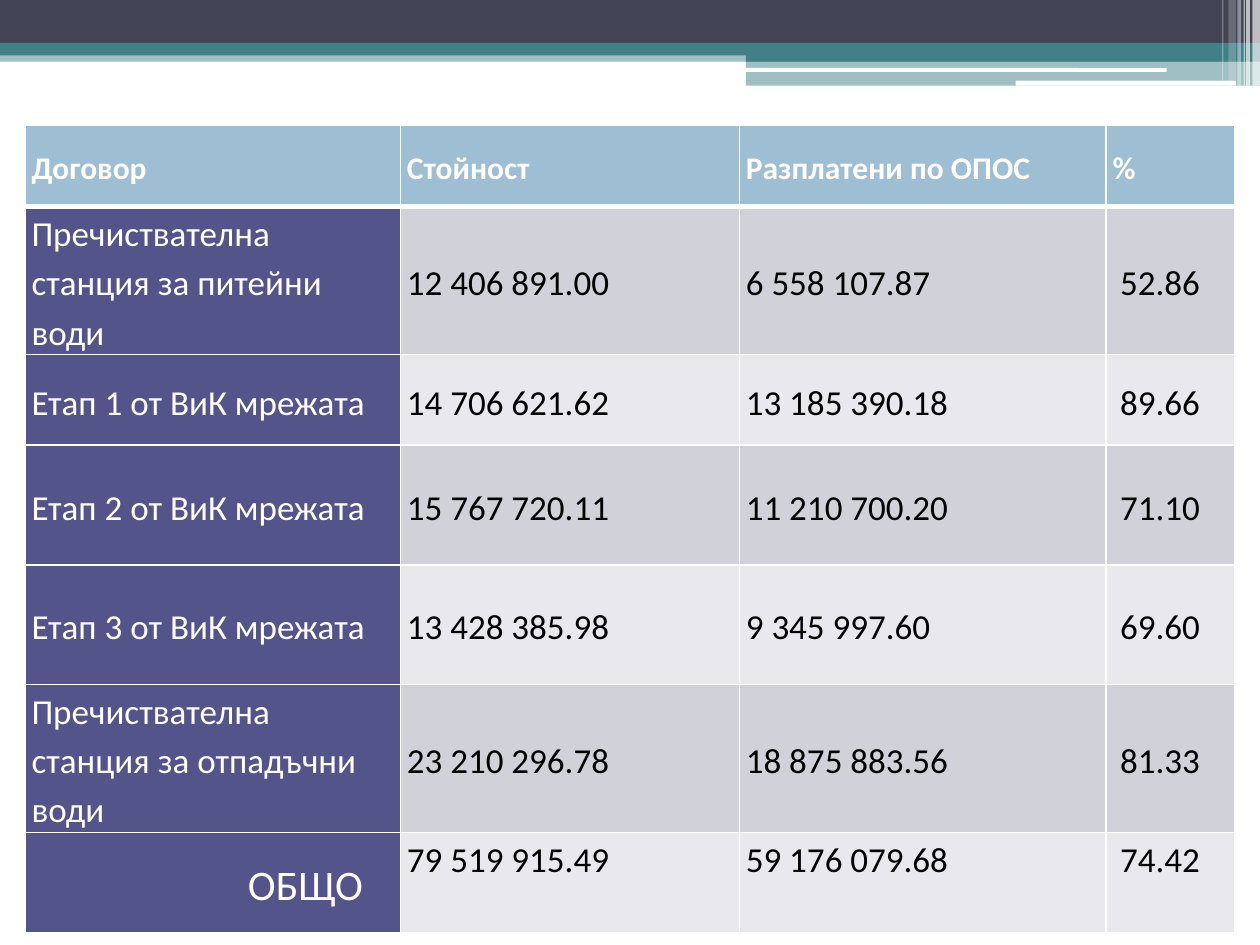
import pptx
import pptx.util
import pptx.dml.color
import pptx.enum.shapes
import pptx.enum.text
import pptx.oxml
import pptx.oxml.ns
import lxml.etree

Inches = pptx.util.Inches
Pt = pptx.util.Pt
RGB = pptx.dml.color.RGBColor.from_string
SHAPE = pptx.enum.shapes.MSO_SHAPE
ALIGN = pptx.enum.text.PP_ALIGN
ANCHOR = pptx.enum.text.MSO_ANCHOR
qn = pptx.oxml.ns.qn

COLORS = {
    "navy": "424456", "teal": "438086", "white": "FFFFFF", "black": "000000",
    "header": "9DBED3", "label": "53548A", "dark": "D1D1DA", "light": "E9E9ED",
}


def add_bar(s, x, y, w, h, color, alpha=100, kind=SHAPE.RECTANGLE):
    sp = s.shapes.add_shape(kind, Inches(x), Inches(y), Inches(w), Inches(h))
    sp.shadow.inherit = False
    sp.line.fill.background()
    sp.fill.solid()
    sp.fill.fore_color.rgb = RGB(COLORS[color])
    if alpha < 100:
        clr = sp.fill._xPr.find(qn("a:solidFill"))[0]
        lxml.etree.SubElement(clr, qn("a:alpha")).set("val", str(alpha * 1000))


def add_border(cell, side, width):
    ln = lxml.etree.SubElement(cell._tc.get_or_add_tcPr(), qn("a:ln" + side))
    ln.set("w", str(Pt(width)))
    fill = lxml.etree.SubElement(ln, qn("a:solidFill"))
    lxml.etree.SubElement(fill, qn("a:srgbClr")).set("val", COLORS["white"])


prs = pptx.Presentation()
prs.slide_width = Inches(10)
prs.slide_height = Inches(7.5)
s = prs.slides.add_slide(prs.slide_layouts[6])

for x, y, w, h, color, alpha in [
    (0, 0.4, 10, 0.09, "teal", 50),
    (0, 0, 10, 0.34, "navy", 100),
    (0, 0.34, 10, 0.1, "teal", 100),
    (5.92, 0.39, 4.08, 0.1, "teal", 100),
    (5.92, 0.48, 4.08, 0.2, "teal", 50),
]:
    add_bar(s, x, y, w, h, color, alpha)

for x, y, w, h in [(5.91, 0.54, 3.35, 0.03), (8.06, 0.64, 1.75, 0.04)]:
    add_bar(s, x, y, w, h, "white", kind=SHAPE.ROUNDED_RECTANGLE)

for x, w, h, alpha in [
    (9.94, 0.06, 0.68, 65), (9.89, 0.03, 0.68, 65), (9.87, 0.01, 0.68, 60),
    (9.82, 0.03, 0.68, 40), (9.75, 0.06, 0.64, 20), (9.7, 0.01, 0.64, 30),
]:
    add_bar(s, x, 0, w, h, "white", alpha)

rows = [
    ("Договор", "Стойност", "Разплатени по ОПОС", "%"),
    ("Пречиствателна станция за питейни води", "12 406 891.00", "6 558 107.87", "52.86"),
    ("Етап 1 от ВиК мрежата", "14 706 621.62", "13 185 390.18", "89.66"),
    ("Етап 2 от ВиК мрежата", "15 767 720.11", "11 210 700.20", "71.10"),
    ("Етап 3 от ВиК мрежата", "13 428 385.98", "9 345 997.60", "69.60"),
    ("Пречиствателна станция за отпадъчни води", "23 210 296.78", "18 875 883.56", "81.33"),
    ("ОБЩО", "79 519 915.49", "59 176 079.68", "74.42"),
]
widths = [2.98, 2.69, 2.91, 1.02]
heights = [0.65, 1.14, 0.72, 0.95, 0.95, 1.08, 0.8]
last = len(rows) - 1

table = s.shapes.add_table(len(rows), len(widths), Inches(0.2), Inches(0.99),
                           Inches(sum(widths)), Inches(sum(heights))).table
for col, width in zip(table.columns, widths):
    col.width = Inches(width)
for row, height in zip(table.rows, heights):
    row.height = Inches(height)

for i, texts in enumerate(rows):
    for j, text in enumerate(texts):
        cell = table.cell(i, j)
        header, label = i == 0, j == 0
        total_label = i == last and label
        fill = "header" if header else "label" if label else "dark" if i % 2 else "light"
        fmt = {
            "margin_left": Inches(0.11 if j == 3 and not header else 0.05),
            "margin_right": Inches(0.3 if total_label else 0.05),
            "margin_top": 0,
            "margin_bottom": 0,
            "vertical_anchor": ANCHOR.TOP if i == last and not label else ANCHOR.MIDDLE,
        }
        for name, value in fmt.items():
            setattr(cell, name, value)
        for side, width in {"L": 1, "R": 1, "T": 3 if i == 1 else 1, "B": 3 if header else 1}.items():
            add_border(cell, side, width)
        cell.fill.solid()
        cell.fill.fore_color.rgb = RGB(COLORS[fill])

        p = cell.text_frame.paragraphs[0]
        p.alignment = ALIGN.RIGHT if total_label else ALIGN.LEFT
        p.line_spacing = 1.15
        p.space_after = Pt(10)
        r = p.add_run()
        r.text = text
        font = {"name": "Calibri", "size": Pt(18 if header else 24 if total_label else 20), "bold": header}
        for name, value in font.items():
            setattr(r.font, name, value)
        r.font.color.rgb = RGB(COLORS["white" if header or label else "black"])

prs.save("out.pptx")
